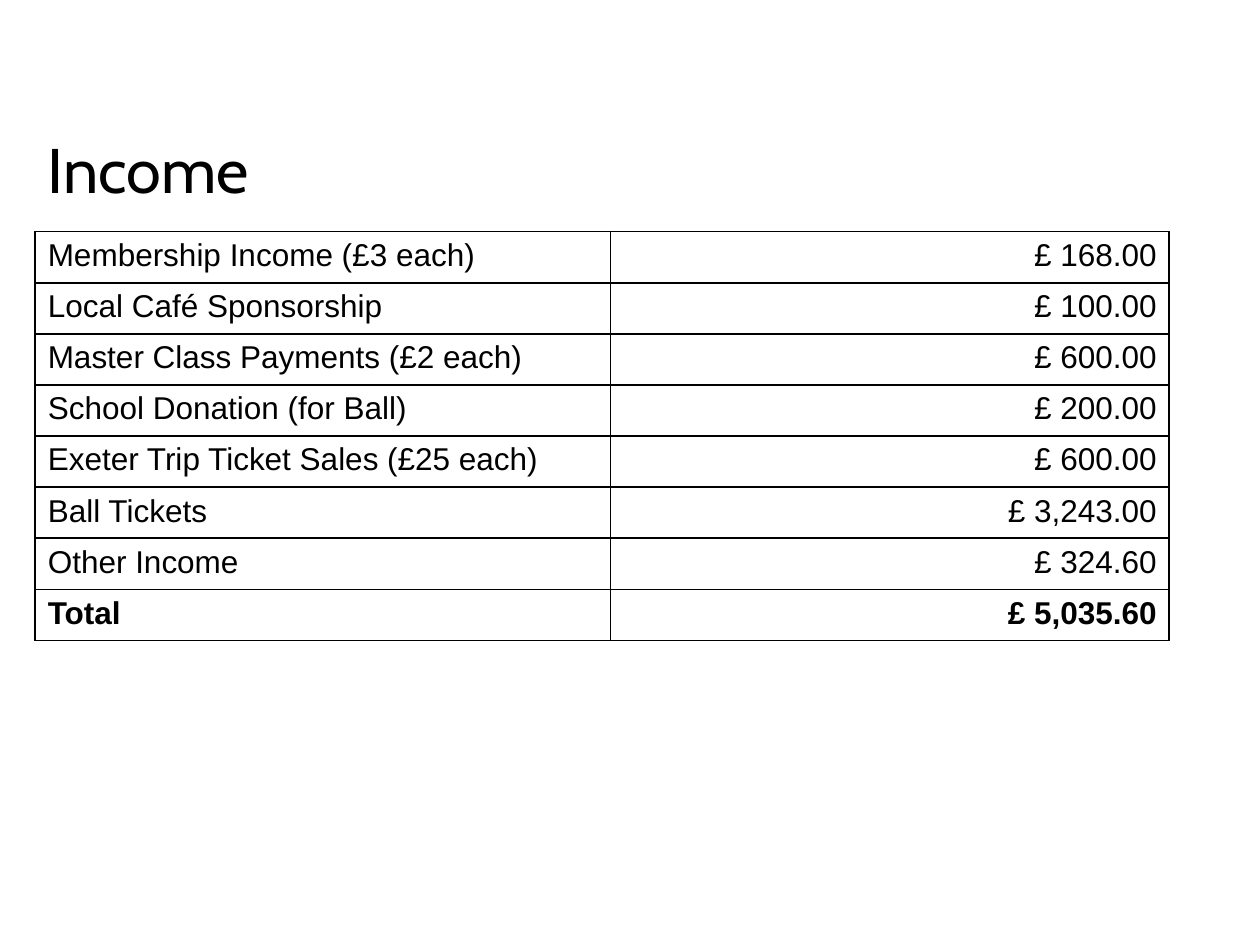
from lxml.etree import SubElement
from pptx import Presentation
from pptx.dml.color import RGBColor
from pptx.enum.text import MSO_ANCHOR, PP_ALIGN
from pptx.oxml.ns import qn
from pptx.util import Cm, Pt

COLORS = {"text": "000000", "border": "000000"}

INCOME = [
    ("Membership Income (£3 each)", "£ 168.00"),
    ("Local Café Sponsorship", "£ 100.00"),
    ("Master Class Payments (£2 each)", "£ 600.00"),
    ("School Donation (for Ball)", "£ 200.00"),
    ("Exeter Trip Ticket Sales (£25 each)", "£ 600.00"),
    ("Ball Tickets", "£ 3,243.00"),
    ("Other Income", "£ 324.60"),
    ("Total", "£ 5,035.60"),
]


def write(tf, text, size=18, font="Arial", bold=False, align=PP_ALIGN.LEFT):
    p = tf.paragraphs[0]
    p.alignment = align
    r = p.add_run()
    r.text = text
    r.font.size = Pt(size)
    r.font.name = font
    r.font.bold = bold
    r.font.color.rgb = RGBColor.from_string(COLORS["text"])


def set_borders(cell, width=1):
    tcPr = cell._tc.get_or_add_tcPr()
    for i, side in enumerate(("lnL", "lnR", "lnT", "lnB")):
        ln = SubElement(tcPr, qn(f"a:{side}"), w=str(Pt(width)))
        fill = SubElement(ln, qn("a:solidFill"))
        SubElement(fill, qn("a:srgbClr"), val=COLORS["border"])
        tcPr.remove(ln)
        tcPr.insert(i, ln)  # borders come before the cell fill


def place_title(slide, text, left, top, width, height):
    sp = slide.shapes.title
    sp.left, sp.top, sp.width, sp.height = Cm(left), Cm(top), Cm(width), Cm(height)
    tf = sp.text_frame
    tf.vertical_anchor = MSO_ANCHOR.TOP
    write(tf, text, size=36, font="Cabin")


def place_income_table(slide, rows, left, top, width, height, label_width):
    table = slide.shapes.add_table(
        len(rows), 2, Cm(left), Cm(top), Cm(width), Cm(height)).table
    table.first_row = table.horz_banding = False
    table.columns[0].width = Cm(label_width)
    table.columns[1].width = Cm(width - label_width)
    for i, row in enumerate(rows):
        is_total = i == len(rows) - 1
        for j, text in enumerate(row):
            cell = table.cell(i, j)
            cell.fill.background()
            set_borders(cell)
            write(cell.text_frame, text, bold=is_total,
                  align=PP_ALIGN.RIGHT if j else PP_ALIGN.LEFT)


def main():
    prs = Presentation()
    prs.slide_width, prs.slide_height = Cm(25.4), Cm(19.05)
    slide = prs.slides.add_slide(prs.slide_layouts[5])

    # Title and table share the left edge and the width
    left, width = 0.71, 22.86
    place_title(slide, "Income", left, 2.51, width, 3.18)
    place_income_table(slide, INCOME, left, 4.67, width, 8.24, label_width=11.6)

    prs.save("out.pptx")


if __name__ == "__main__":
    main()
